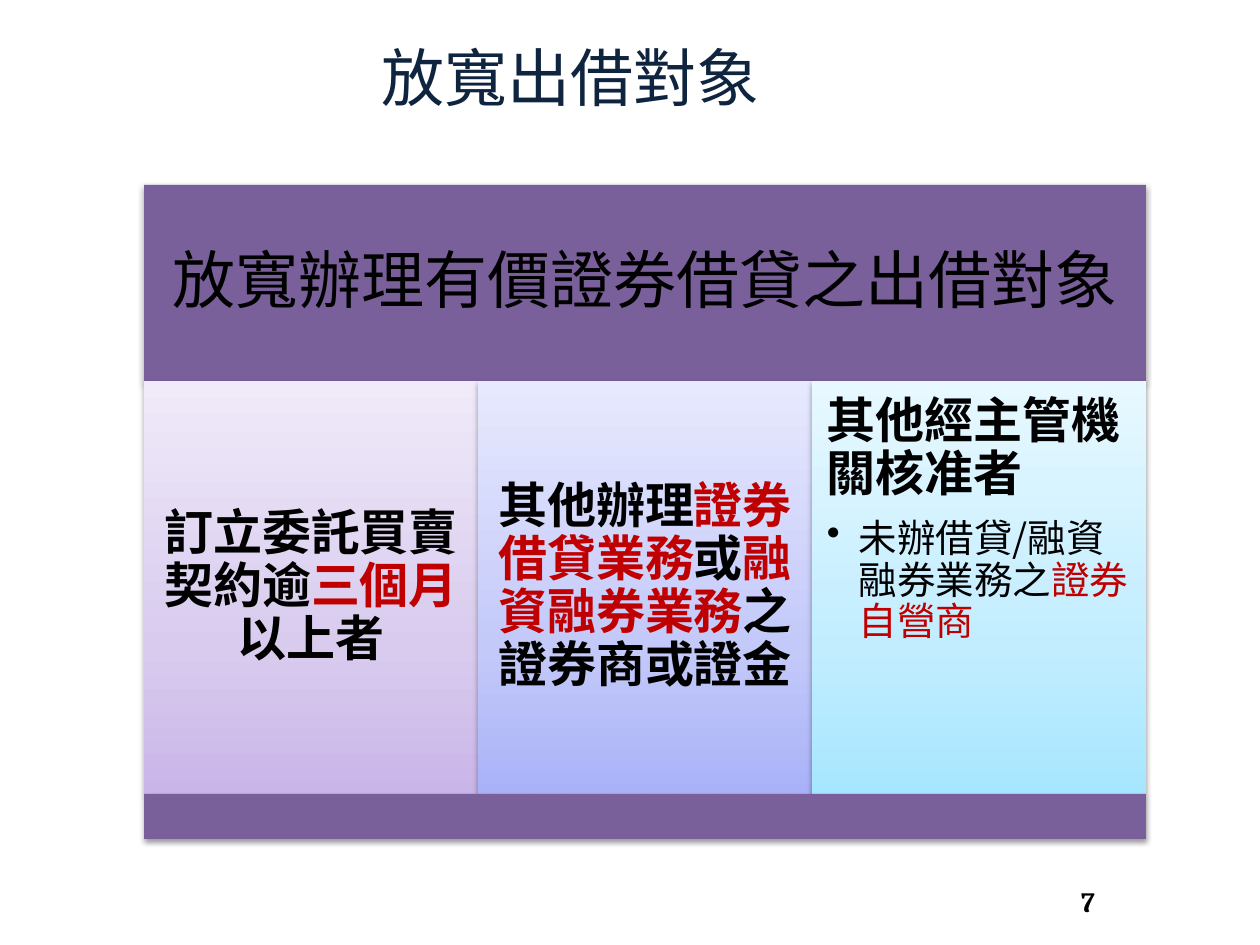
from lxml.etree import SubElement
from pptx import Presentation
from pptx.dml.color import RGBColor
from pptx.enum.shapes import MSO_SHAPE
from pptx.enum.text import MSO_ANCHOR, PP_ALIGN
from pptx.oxml import parse_xml
from pptx.oxml.ns import nsdecls, qn
from pptx.util import Emu, Pt

BLACK = RGBColor(0x00, 0x00, 0x00)
NAVY = RGBColor(0x0F, 0x24, 0x3E)
RED = RGBColor(0xC0, 0x00, 0x00)
PURPLE = RGBColor(0x7A, 0x60, 0x9B)
LILAC = RGBColor(0xC9, 0xB5, 0xE8), RGBColor(0xD8, 0xCB, 0xEE), RGBColor(0xF0, 0xEA, 0xF9)
BLUE = RGBColor(0xA9, 0xB2, 0xF8), RGBColor(0xC3, 0xC9, 0xF9), RGBColor(0xE7, 0xE9, 0xFE)
CYAN = RGBColor(0xA7, 0xE6, 0xFF), RGBColor(0xC1, 0xED, 0xFF), RGBColor(0xE7, 0xF8, 0xFF)
SERIF = "Cambria"
SANS = "Noto Sans CJK SC"


class Deck:
    scale = 914400 / 126

    def __init__(self, wide, high):
        self.show = Presentation()
        self.show.slide_width = self.emu(wide)
        self.show.slide_height = self.emu(high)
        self.slide = self.show.slides.add_slide(self.show.slide_layouts[6])

    def emu(self, px):
        return Emu(round(px * self.scale))

    def rect(self, box, fill):
        shape = self.slide.shapes.add_shape(MSO_SHAPE.RECTANGLE, *map(self.emu, box))
        shape.line.fill.background()
        if isinstance(fill, RGBColor):
            shape.fill.solid()
            shape.fill.fore_color.rgb = fill
        else:
            self.blend(shape, fill)
        shape.shadow.inherit = False
        shade = shape._element.spPr.find(qn("a:effectLst"))
        shade.append(parse_xml(
            f'<a:outerShdw {nsdecls("a")} blurRad="40000" dist="20000" dir="5400000" '
            'rotWithShape="0"><a:srgbClr val="000000"><a:alpha val="38000"/>'
            '</a:srgbClr></a:outerShdw>'))

    def blend(self, shape, hues):
        stops = "".join(
            f'<a:gs pos="{pos}000"><a:srgbClr val="{hue}"/></a:gs>'
            for pos, hue in zip((0, 35, 100), hues))
        shape._element.spPr.find(qn("a:prstGeom")).addnext(parse_xml(
            f'<a:gradFill {nsdecls("a")} rotWithShape="1"><a:gsLst>{stops}</a:gsLst>'
            '<a:lin ang="16200000" scaled="0"/></a:gradFill>'))

    def text(self, box, pad=None, anchor=MSO_ANCHOR.MIDDLE):
        frame = self.slide.shapes.add_textbox(*map(self.emu, box)).text_frame
        frame.word_wrap = True
        frame.vertical_anchor = anchor
        if pad is not None:
            frame.margin_left = frame.margin_right = self.emu(pad)
            frame.margin_top = frame.margin_bottom = self.emu(pad)
        return frame

    def para(self, para, runs, size, face=SANS, color=BLACK, bold=False,
             align=PP_ALIGN.CENTER, line=0.9, after=0, bullet=False):
        para.alignment = align
        para.line_spacing = line
        para.space_after = Pt(after)
        if bullet:
            props = para._p.get_or_add_pPr()
            props.set("marL", str(self.emu(32)))
            props.set("indent", str(-self.emu(32)))
            SubElement(props, qn("a:buChar")).set("char", "•")
        font = para.font
        font.size, font.bold, font.name = Pt(size), bold, face
        font.color.rgb = color
        SubElement(font._element, qn("a:ea")).set("typeface", SANS)
        for words, hue in runs:
            run = para.add_run()
            run.text = words
            if hue != color:
                run.font.color.rgb = hue


def main():
    deck = Deck(1260, 945)
    title = deck.text((174, 26, 794, 100))
    deck.para(title.paragraphs[0], [("放寬出借對象", NAVY)], 36, SERIF, NAVY, line=1.0)
    page = deck.text((941, 876, 294, 50))
    deck.para(page.paragraphs[0], [("7", BLACK)], 16, SERIF, bold=True, line=1.0)

    left, top, wide = 144, 185, 1002
    head, body, foot = 196, 413, 45
    banner = (left, top, wide, head)
    deck.rect(banner, PURPLE)
    frame = deck.text(banner, 19)
    deck.para(frame.paragraphs[0], [("放寬辦理有價證券借貸之出借對象", BLACK)], 36)

    cols = [
        (LILAC, MSO_ANCHOR.MIDDLE, PP_ALIGN.CENTER,
         [("訂立委託買賣契約逾", BLACK), ("三個月", RED), ("以上者", BLACK)]),
        (BLUE, MSO_ANCHOR.MIDDLE, PP_ALIGN.CENTER,
         [("其他辦理", BLACK), ("證券借貸業務", RED), ("或", BLACK),
          ("融資融券業務", RED), ("之證券商或證金", BLACK)]),
        (CYAN, MSO_ANCHOR.TOP, PP_ALIGN.LEFT, [("其他經主管機關核准者", BLACK)]),
    ]
    step = wide // len(cols)
    for i, (fill, anchor, align, runs) in enumerate(cols):
        box = (left + i * step, top + head, step, body)
        deck.rect(box, fill)
        frame = deck.text(box, 15, anchor)
        deck.para(frame.paragraphs[0], runs, 28, bold=True, align=align, after=10)
    deck.para(frame.add_paragraph(),
              [("未辦借貸/融資融券業務之", BLACK), ("證券自營商", RED)],
              22, align=PP_ALIGN.LEFT, bullet=True)

    deck.rect((left, top + head + body, wide, foot), PURPLE)
    deck.show.save("out.pptx")


if __name__ == "__main__":
    main()
